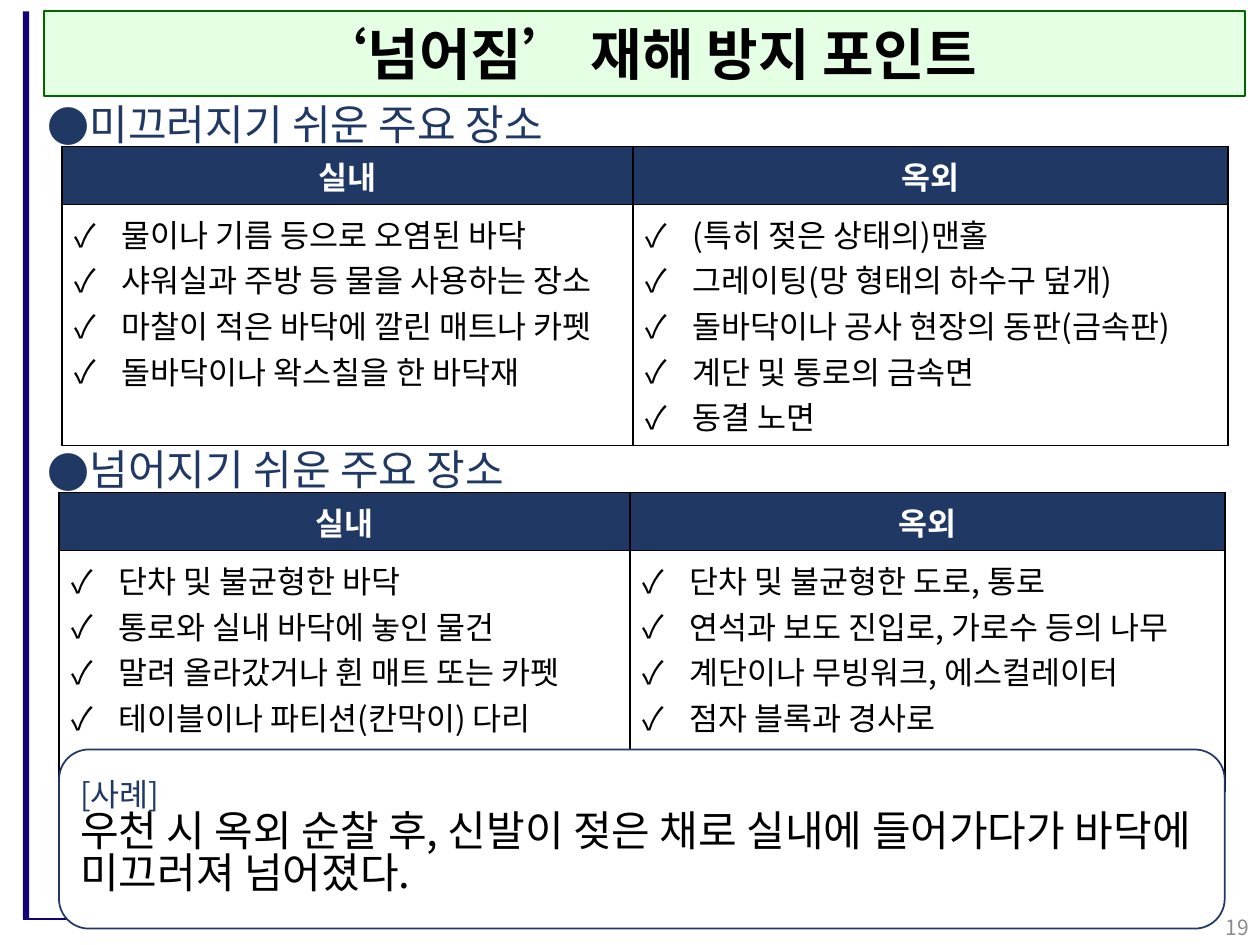
from lxml.etree import SubElement
from pptx import Presentation
from pptx.dml.color import RGBColor
from pptx.enum.shapes import MSO_CONNECTOR as Line, MSO_SHAPE as Preset
from pptx.enum.text import MSO_ANCHOR as Anchor, PP_ALIGN as Align
from pptx.oxml.ns import qn
from pptx.util import Cm, Pt

FONT = "Noto Sans CJK JP"
NAVY, PURPLE, GREEN, BLACK, WHITE = "203864", "140078", "006600", "000000", "FFFFFF"


def color(code):
    return RGBColor.from_string(code)


def write(frame, text, size=18, ink=BLACK, bold=False, align=Align.LEFT,
          spacing=None, bullet=None, indent=0):
    frame.word_wrap = True
    para = frame.paragraphs[0]
    if para.runs:
        para = frame.add_paragraph()
    para.alignment = align
    if spacing:
        para.line_spacing = spacing
    if bullet:
        props = para._p.get_or_add_pPr()
        props.set("marL", str(Cm(indent)))
        props.set("indent", str(-Cm(indent)))
        SubElement(props, qn("a:buFont"), typeface=FONT)
        SubElement(props, qn("a:buChar"), char=bullet)
    span = para.add_run()
    span.text = text
    span.font.size = Pt(size)
    span.font.bold = bold
    span.font.name = FONT
    span.font.color.rgb = color(ink)
    SubElement(span._r.get_or_add_rPr(), qn("a:ea"), typeface=FONT)


deck = Presentation()
deck.slide_width, deck.slide_height = Cm(25.4), Cm(19.05)
page = deck.slides.add_slide(deck.slide_layouts[6])

bar = page.shapes.add_shape(Preset.RECTANGLE, Cm(0.46), Cm(0.23), Cm(0.13), Cm(18.29))
bar.shadow.inherit = False
bar.fill.solid()
bar.fill.fore_color.rgb = color(PURPLE)
bar.line.fill.background()

rule = page.shapes.add_connector(Line.STRAIGHT, Cm(0.46), Cm(18.52), Cm(22.91), Cm(18.52))
rule.line.color.rgb = color(PURPLE)
rule.line.width = Pt(1)
SubElement(rule._element.spPr, qn("a:effectLst"))

title = page.shapes.add_shape(Preset.RECTANGLE, Cm(0.89), Cm(0.23), Cm(24.21), Cm(1.7))
title.shadow.inherit = False
title.fill.solid()
title.fill.fore_color.rgb = color("CCFFCC")
tint = title._element.spPr.find(qn("a:solidFill")).find(qn("a:srgbClr"))
SubElement(tint, qn("a:alpha"), val="50000")
title.line.color.rgb = color(GREEN)
title.line.width = Pt(1)
title.text_frame.vertical_anchor = Anchor.MIDDLE
write(title.text_frame, "‘넘어짐’ 재해 방지 포인트", size=32, bold=True, align=Align.CENTER)

sections = [
    ("미끄러지기 쉬운 주요 장소", 1.98, 1.25, 2.95, [
        ["물이나 기름 등으로 오염된 바닥", "샤워실과 주방 등 물을 사용하는 장소",
         "마찰이 적은 바닥에 깔린 매트나 카펫", "돌바닥이나 왁스칠을 한 바닥재"],
        ["(특히 젖은 상태의)맨홀", "그레이팅(망 형태의 하수구 덮개)",
         "돌바닥이나 공사 현장의 동판(금속판)", "계단 및 통로의 금속면", "동결 노면"]]),
    ("넘어지기 쉬운 주요 장소", 8.94, 1.19, 9.93, [
        ["단차 및 불균형한 바닥", "통로와 실내 바닥에 놓인 물건",
         "말려 올라갔거나 휜 매트 또는 카펫", "테이블이나 파티션(칸막이) 다리"],
        ["단차 및 불균형한 도로, 통로", "연석과 보도 진입로, 가로수 등의 나무",
         "계단이나 무빙워크, 에스컬레이터", "점자 블록과 경사로"]]),
]

for heading, heading_top, left, top, places in sections:
    box = page.shapes.add_textbox(Cm(0.71), Cm(heading_top), Cm(24.59), Cm(1.3))
    write(box.text_frame, heading, size=24, ink=NAVY, spacing=0.9, bullet="●", indent=0.64)

    table = page.shapes.add_table(2, 2, Cm(left), Cm(top), Cm(23.5), Cm(6.03)).table
    table.columns[0].width, table.columns[1].width = Cm(11.51), Cm(11.99)
    table.rows[0].height, table.rows[1].height = Cm(1.17), Cm(4.86)
    for column, label in enumerate(["실내", "옥외"]):
        head, body = table.cell(0, column), table.cell(1, column)
        for cell, shade in ((head, NAVY), (body, WHITE)):
            props = cell._tc.get_or_add_tcPr()
            for side in ("lnL", "lnR", "lnT", "lnB"):
                edge = SubElement(props, qn(f"a:{side}"), w=str(Pt(1)))
                SubElement(SubElement(edge, qn("a:solidFill")), qn("a:srgbClr"), val=BLACK)
            cell.fill.solid()
            cell.fill.fore_color.rgb = color(shade)
        write(head.text_frame, label, ink=WHITE, bold=True, align=Align.CENTER)
        for place in places[column]:
            write(body.text_frame, place, bullet="✓", indent=0.95)

case = page.shapes.add_shape(Preset.ROUNDED_RECTANGLE, Cm(1.19), Cm(15.11), Cm(23.5), Cm(3.61))
case.shadow.inherit = False
case.fill.solid()
case.fill.fore_color.rgb = color(WHITE)
case.line.color.rgb = color(NAVY)
case.line.width = Pt(1)
case.text_frame.vertical_anchor = Anchor.MIDDLE
write(case.text_frame, "[사례]", ink=NAVY, spacing=0.84)
write(case.text_frame, "우천 시 옥외 순찰 후, 신발이 젖은 채로 실내에 들어가다가 바닥에 미끄러져 넘어졌다.",
      size=24, spacing=0.84)

number = page.shapes.add_textbox(Cm(19.71), Cm(18.19), Cm(5.72), Cm(1.02))
number.text_frame.vertical_anchor = Anchor.MIDDLE
write(number.text_frame, "19", size=12, ink="8C8C8C", align=Align.RIGHT)

deck.save("out.pptx")
